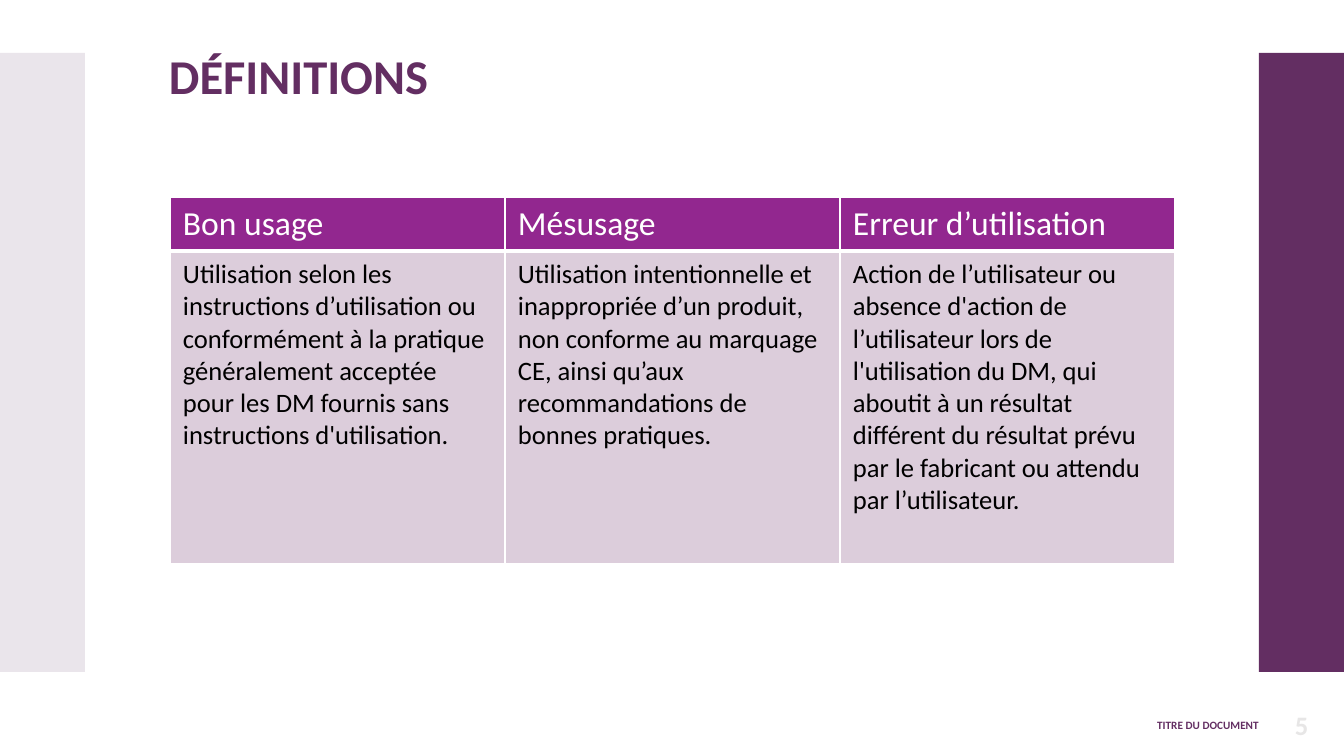
from lxml.etree import SubElement
from pptx import Presentation
from pptx.dml.color import RGBColor
from pptx.enum.shapes import MSO_SHAPE
from pptx.enum.text import MSO_ANCHOR, PP_ALIGN
from pptx.oxml.ns import qn
from pptx.util import Pt

PX = 914400 / 100.8
WIDE, HIGH = 1344, 756
FONT = "Calibri"
COLORS = {
    "plum": "632E62",
    "mist": "EAE5EB",
    "violet": "92278F",
    "lilac": "DCCDDB",
    "grey": "E7E6E6",
    "white": "FFFFFF",
    "black": "000000",
}


def px(*sizes):
    """Turn pixel lengths into EMU."""
    return [round(size * PX) for size in sizes]


def style(frame, size, color, bold=False):
    """Format every run of a text frame."""
    for para in frame.paragraphs:
        for run in para.runs:
            run.font.name = FONT
            run.font.size = Pt(size)
            run.font.bold = bold
            run.font.color.rgb = RGBColor.from_string(COLORS[color])


deck = Presentation()
deck.slide_width, deck.slide_height = px(WIDE, HIGH)
slide = deck.slides.add_slide(deck.slide_layouts[6])
shapes = slide.shapes

# Side bars
BAR, TOP = 85, 53
for left, color in ((WIDE - BAR, "plum"), (0, "mist")):
    bar = shapes.add_shape(MSO_SHAPE.RECTANGLE, *px(left, TOP, BAR, 619))
    bar.shadow.inherit = False
    bar.fill.solid()
    bar.fill.fore_color.rgb = RGBColor.from_string(COLORS[color])
    bar.line.fill.background()

# Title, footer and page number
MID = MSO_ANCHOR.MIDDLE
labels = [
    ("DÉFINITIONS", (169, TOP, 1005, 52), 34.7, "plum",
     PP_ALIGN.LEFT, MSO_ANCHOR.TOP, 0.9),
    ("TITRE DU DOCUMENT", (847, 709, 412, 31), 8, "plum",
     PP_ALIGN.RIGHT, MID, 1),
    ("5", (WIDE - BAR, 709, BAR, 31), 19, "grey", PP_ALIGN.CENTER, MID, 1),
]
for text, place, size, color, align, anchor, space in labels:
    frame = shapes.add_textbox(*px(*place)).text_frame
    frame.margin_left = frame.margin_right = 0
    frame.margin_top = frame.margin_bottom = 0
    frame.word_wrap = True
    frame.vertical_anchor = anchor
    frame.text = text
    frame.paragraphs[0].alignment = align
    frame.paragraphs[0].line_spacing = space
    style(frame, size, color, bold=True)

# Table of definitions
terms = [
    ("Bon usage",
     "Utilisation selon les instructions d’utilisation ou conformément à la "
     "pratique généralement acceptée pour les DM fournis sans instructions "
     "d'utilisation."),
    ("Mésusage",
     "Utilisation intentionnelle et inappropriée d’un produit, non conforme "
     "au marquage CE, ainsi qu’aux recommandations de bonnes pratiques."),
    ("Erreur d’utilisation",
     "Action de l’utilisateur ou absence d'action de l’utilisateur lors de "
     "l'utilisation du DM, qui aboutit à un résultat différent du résultat "
     "prévu par le fabricant ou attendu par l’utilisateur."),
]
# Row height, text size, text colour, fill, bottom border
looks = [(54, 24, "white", "violet", 3), (312, 19, "black", "lilac", 1)]
table = shapes.add_table(
    len(looks), len(terms), *px(170, 197, 1005, 366)).table
table.horz_banding = False
for col in table.columns:
    col.width = px(335)[0]
for row, (high, size, color, fill, base) in enumerate(looks):
    table.rows[row].height = px(high)[0]
    for col, term in enumerate(terms):
        cell = table.cell(row, col)
        cell.margin_left, cell.margin_right = px(13, 13)
        cell.margin_top, cell.margin_bottom = px(7, 7)
        cell.text_frame.text = term[row]
        style(cell.text_frame, size, color)
        props = cell._tc.get_or_add_tcPr()
        for side, width in (("L", 1), ("R", 1), ("T", 1), ("B", base)):
            line = SubElement(props, qn("a:ln" + side), w=str(Pt(width)))
            paint = SubElement(line, qn("a:solidFill"))
            SubElement(paint, qn("a:srgbClr"), val=COLORS["white"])
        cell.fill.solid()
        cell.fill.fore_color.rgb = RGBColor.from_string(COLORS[fill])

deck.save("out.pptx")
